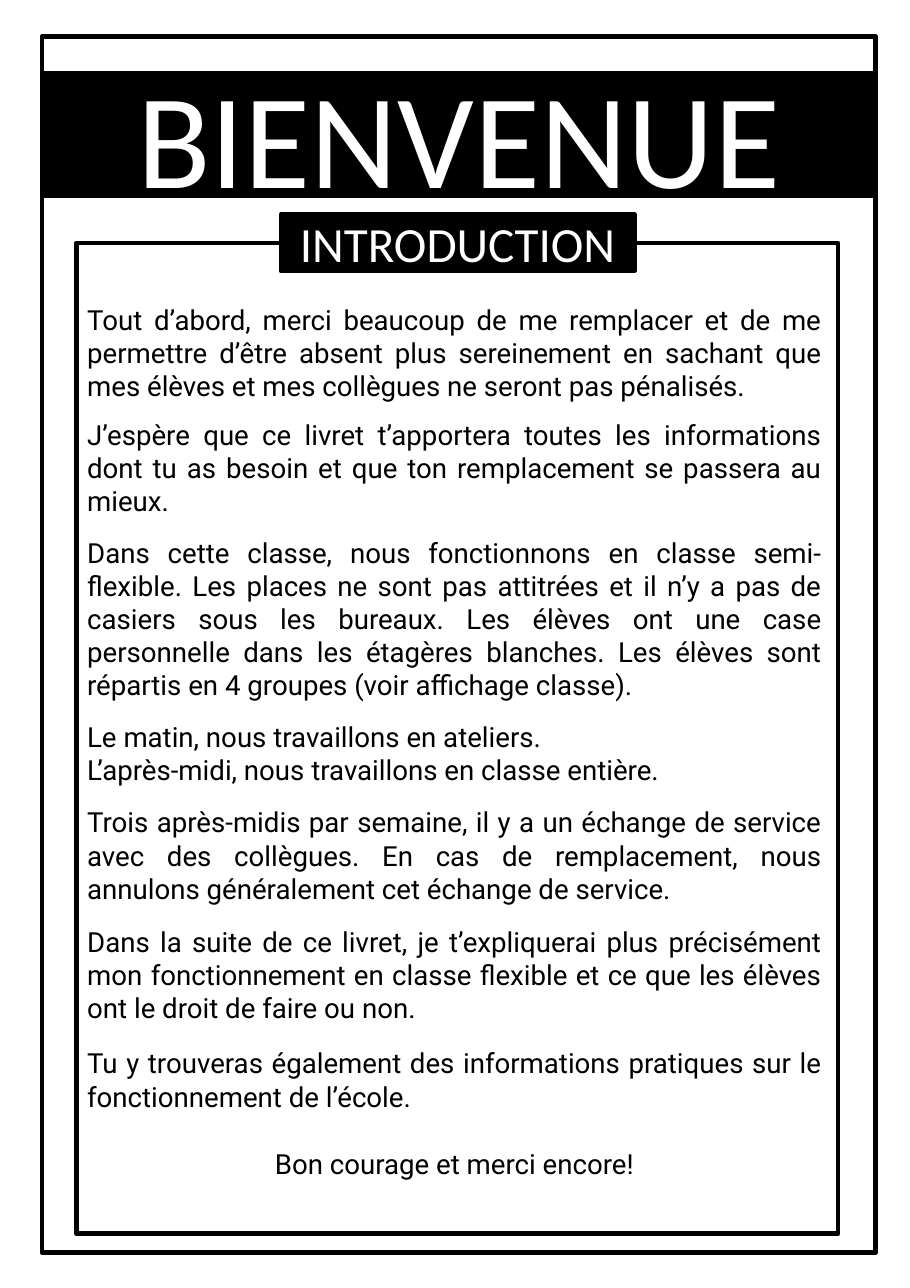
from pptx import Presentation
from pptx.dml.color import RGBColor
from pptx.enum.shapes import MSO_SHAPE
from pptx.enum.text import MSO_ANCHOR, MSO_AUTO_SIZE, PP_ALIGN
from pptx.util import Pt

PX = 9144  # 100 px to the inch
TITLE_ONLY = 5
RECTANGLE = MSO_SHAPE.RECTANGLE
MIDDLE, TOP = MSO_ANCHOR.MIDDLE, MSO_ANCHOR.TOP
NO_AUTOFIT = MSO_AUTO_SIZE.NONE
CENTER, JUSTIFY = PP_ALIGN.CENTER, PP_ALIGN.JUSTIFY
BLACK, WHITE = "000000", "FFFFFF"
HEADING_FONT, BODY_FONT = "Calibri", "Roboto"

# Each paragraph with the space after it, in points
LETTER = [
    ("Tout d’abord, merci beaucoup de me remplacer et de me permettre d’être absent "
     "plus sereinement en sachant que mes élèves et mes collègues ne seront pas "
     "pénalisés.", 9.8),
    ("J’espère que ce livret t’apportera toutes les informations dont tu as besoin "
     "et que ton remplacement se passera au mieux.", 12.2),
    ("Dans cette classe, nous fonctionnons en classe semi-flexible. Les places ne "
     "sont pas attitrées et il n’y a pas de casiers sous les bureaux. Les élèves ont "
     "une case personnelle dans les étagères blanches. Les élèves sont répartis en "
     "4 groupes (voir affichage classe).", 12.2),
    ("Le matin, nous travaillons en ateliers.", 0),
    ("L’après-midi, nous travaillons en classe entière.", 12.2),
    ("Trois après-midis par semaine, il y a un échange de service avec des "
     "collègues. En cas de remplacement, nous annulons généralement cet échange de "
     "service.", 12.8),
    ("Dans la suite de ce livret, je t’expliquerai plus précisément mon "
     "fonctionnement en classe flexible et ce que les élèves ont le droit de faire "
     "ou non.", 14.6),
    ("Tu y trouveras également des informations pratiques sur le fonctionnement de "
     "l’école.", 22),
]
CLOSING = "Bon courage et merci encore!"


def color(hex_code):
    return RGBColor.from_string(hex_code)


def emu(*lengths):
    return [length * PX for length in lengths]


def place(shape, box):
    shape.left, shape.top, shape.width, shape.height = emu(*box)


def outline(shape, fill=None):
    """Give the shape the black border and an optional fill."""
    if fill:
        shape.fill.solid()
        shape.fill.fore_color.rgb = color(fill)
    else:
        shape.fill.background()
    shape.line.color.rgb = color(BLACK)
    shape.line.width = Pt(3)


def add_rectangle(slide, box, fill=None):
    shape = slide.shapes.add_shape(RECTANGLE, *emu(*box))
    shape.shadow.inherit = False
    outline(shape, fill)
    return shape


def write(paragraph, text, *, size, font=BODY_FONT, ink=BLACK, align=JUSTIFY, after=0):
    paragraph.alignment = align
    paragraph.space_after = Pt(after)
    run = paragraph.add_run()
    run.text = text
    run.font.size = Pt(size)
    run.font.name = font
    run.font.color.rgb = color(ink)


def write_heading(shape, text, size):
    frame = shape.text_frame
    frame.auto_size = NO_AUTOFIT
    frame.word_wrap = True
    frame.vertical_anchor = MIDDLE
    write(frame.paragraphs[0], text, size=size, font=HEADING_FONT, ink=WHITE, align=CENTER)


def add_banner(slide, box):
    title = slide.shapes.title
    place(title, box)
    outline(title, BLACK)
    write_heading(title, "BIENVENUE", 88)


def add_letter(slide, box):
    left, top, width, height = box
    text_box = slide.shapes.add_textbox(*emu(left, top + 49, width - 5, height - 87))
    frame = text_box.text_frame
    frame.word_wrap = True
    frame.vertical_anchor = TOP
    paragraph = frame.paragraphs[0]
    for text, after in LETTER:
        write(paragraph, text, size=18, after=after)
        paragraph = frame.add_paragraph()
    write(paragraph, CLOSING, size=18, align=CENTER)


def add_introduction(slide, box):
    left, top, width, height = box
    add_rectangle(slide, box)
    label = add_rectangle(slide, (left + 185, top - 26, 320, 51), BLACK)
    write_heading(label, "INTRODUCTION", 32)
    add_letter(slide, box)


def add_welcome_page(slide, box):
    left, top, width, height = box
    add_rectangle(slide, box)
    add_banner(slide, (left, top + 33, width, 111))
    add_introduction(slide, (left + 31, top + 187, width - 65, height - 204))


def main():
    presentation = Presentation()
    presentation.slide_width, presentation.slide_height = emu(823, 1165)
    slide = presentation.slides.add_slide(presentation.slide_layouts[TITLE_ONLY])
    add_welcome_page(slide, (38, 33, 754, 1100))
    presentation.save("out.pptx")


if __name__ == "__main__":
    main()
